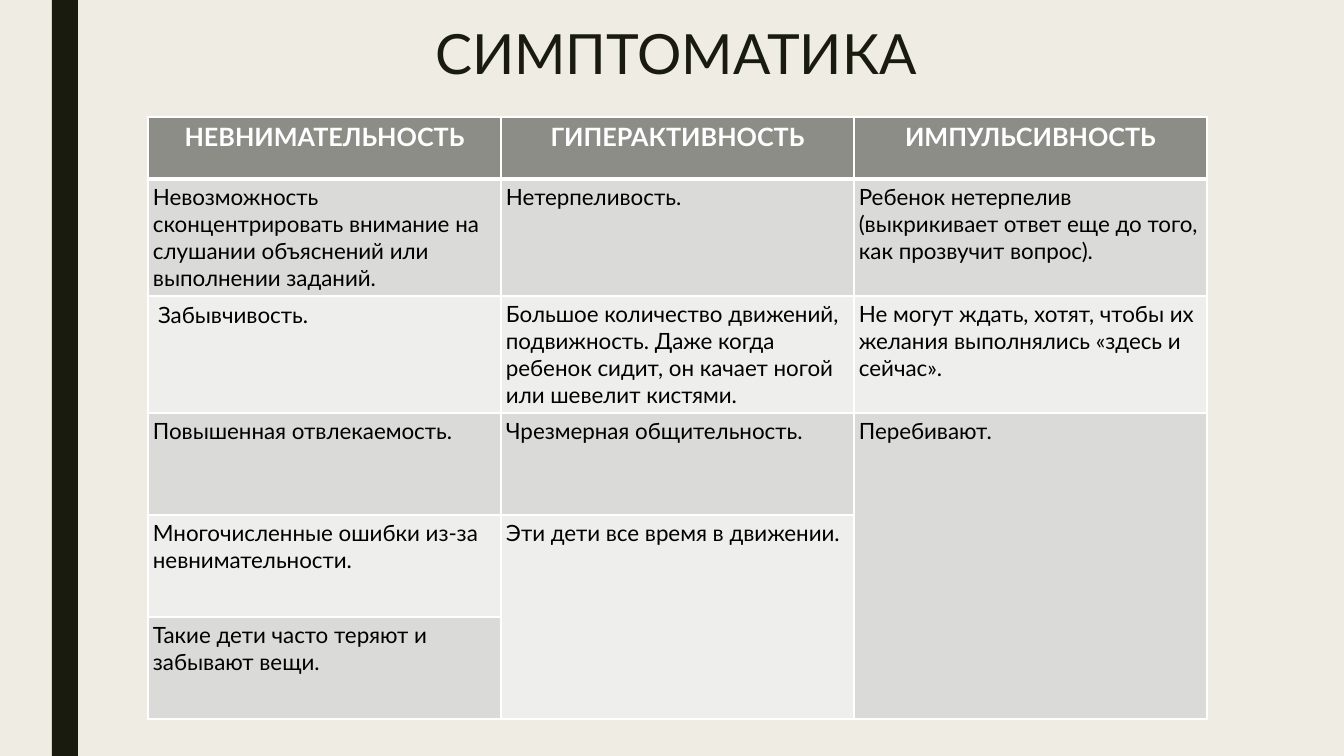
from lxml.etree import SubElement
from pptx import Presentation
from pptx.dml.color import RGBColor
from pptx.enum.shapes import MSO_SHAPE as Shape
from pptx.enum.text import MSO_ANCHOR as Anchor, PP_ALIGN as Align
from pptx.oxml import parse_xml
from pptx.oxml.ns import nsdecls, qn
from pptx.util import Pt

PX = 914400 / 100.8
FONT = "Lato"
INK, PAPER, WHITE, BLACK = "191B0E", "EFEDE3", "FFFFFF", "000000"
HEADER_FILL, BAND_FILLS = "8C8D86", ("DADBD9", "EEEEED")
ROW_HEIGHTS = (62, 117, 117, 102, 102, 102)
COLUMN_WIDTH = 353
INSET = 5
ROWS = (
    ("НЕВНИМАТЕЛЬНОСТЬ", "ГИПЕРАКТИВНОСТЬ", "ИМПУЛЬСИВНОСТЬ"),
    ("Невозможность сконцентрировать внимание на слушании объяснений или выполнении заданий.",
     "Нетерпеливость.",
     "Ребенок нетерпелив (выкрикивает ответ еще до того, как прозвучит вопрос)."),
    ("Забывчивость.",
     "Большое количество движений, подвижность. Даже когда ребенок сидит, "
     "он качает ногой или шевелит кистями.",
     "Не могут ждать, хотят, чтобы их желания выполнялись «здесь и сейчас»."),
    ("Повышенная отвлекаемость.", "Чрезмерная общительность.", "Перебивают."),
    ("Многочисленные ошибки из-за невнимательности.", "Эти дети все время в движении.", ""),
    ("Такие дети часто теряют и забывают вещи.", "", ""),
)


def px(length):
    return round(length * PX)


def color(value):
    return RGBColor.from_string(value)


def paint(fill, value):
    fill.solid()
    fill.fore_color.rgb = color(value)


def write(para, text, size, value, bold=False):
    run = para.add_run()
    run.text = text
    run.font.name = FONT
    run.font.size = Pt(size)
    run.font.bold = bold
    run.font.color.rgb = color(value)


def add_stripe(page, box):
    stripe = page.shapes.add_shape(Shape.RECTANGLE, *map(px, box))
    stripe.shadow.inherit = False
    paint(stripe.fill, INK)
    stripe.line.fill.background()


def set_title(page, box, text):
    title = page.shapes.title
    title.left, title.top, title.width, title.height = map(px, box)
    frame = title.text_frame
    frame.word_wrap = True
    frame.vertical_anchor = Anchor.MIDDLE
    frame.margin_top = frame.margin_bottom = 0
    para = frame.paragraphs[0]
    para.alignment = Align.CENTER
    para.line_spacing = 0.89
    write(para, text, 39.6, INK)


def set_borders(cell, top, bottom):
    properties = cell._tc.get_or_add_tcPr()
    sides = (("lnL", 1), ("lnR", 1), ("lnT", top), ("lnB", bottom))
    for position, (side, width) in enumerate(sides):
        line = parse_xml(f'<a:{side} {nsdecls("a")} w="{Pt(width)}"/>')
        fill = SubElement(line, qn("a:solidFill"))
        SubElement(fill, qn("a:srgbClr"), val=WHITE)
        properties.insert(position, line)


def fill_cell(cell, row, text):
    header = row == 0
    paint(cell.fill, HEADER_FILL if header else BAND_FILLS[(row - 1) % 2])
    set_borders(cell, 3 if row == 1 else 1, 3 if header else 1)
    cell.vertical_anchor = Anchor.TOP
    if not header and text != "Забывчивость.":
        cell.margin_left = cell.margin_right = px(INSET)
        cell.margin_top = cell.margin_bottom = px(INSET)
    if text:
        para = cell.text_frame.paragraphs[0]
        para.alignment = Align.CENTER if header else Align.LEFT
        write(para, text, 18 if header else 16, WHITE if header else BLACK, header)


def add_symptoms(page, left, top):
    columns = len(ROWS[0])
    box = (left, top, COLUMN_WIDTH * columns, sum(ROW_HEIGHTS))
    table = page.shapes.add_table(len(ROWS), columns, *map(px, box)).table
    for column in table.columns:
        column.width = px(COLUMN_WIDTH)
    for row, texts in enumerate(ROWS):
        table.rows[row].height = px(ROW_HEIGHTS[row])
        for column, text in enumerate(texts):
            fill_cell(table.cell(row, column), row, text)
    for first_row, column in ((4, 1), (3, 2)):
        table.cell(first_row, column).merge(table.cell(len(ROWS) - 1, column))


def main():
    deck = Presentation()
    deck.slide_width, deck.slide_height = px(1344), px(756)
    page = deck.slides.add_slide(deck.slide_layouts[5])
    paint(page.background.fill, PAPER)
    add_stripe(page, (52, 0, 26, 756))
    set_title(page, (147, 24, 1058, 66), "СИМПТОМАТИКА")
    add_symptoms(page, 148, 117)
    deck.save("out.pptx")


if __name__ == "__main__":
    main()
